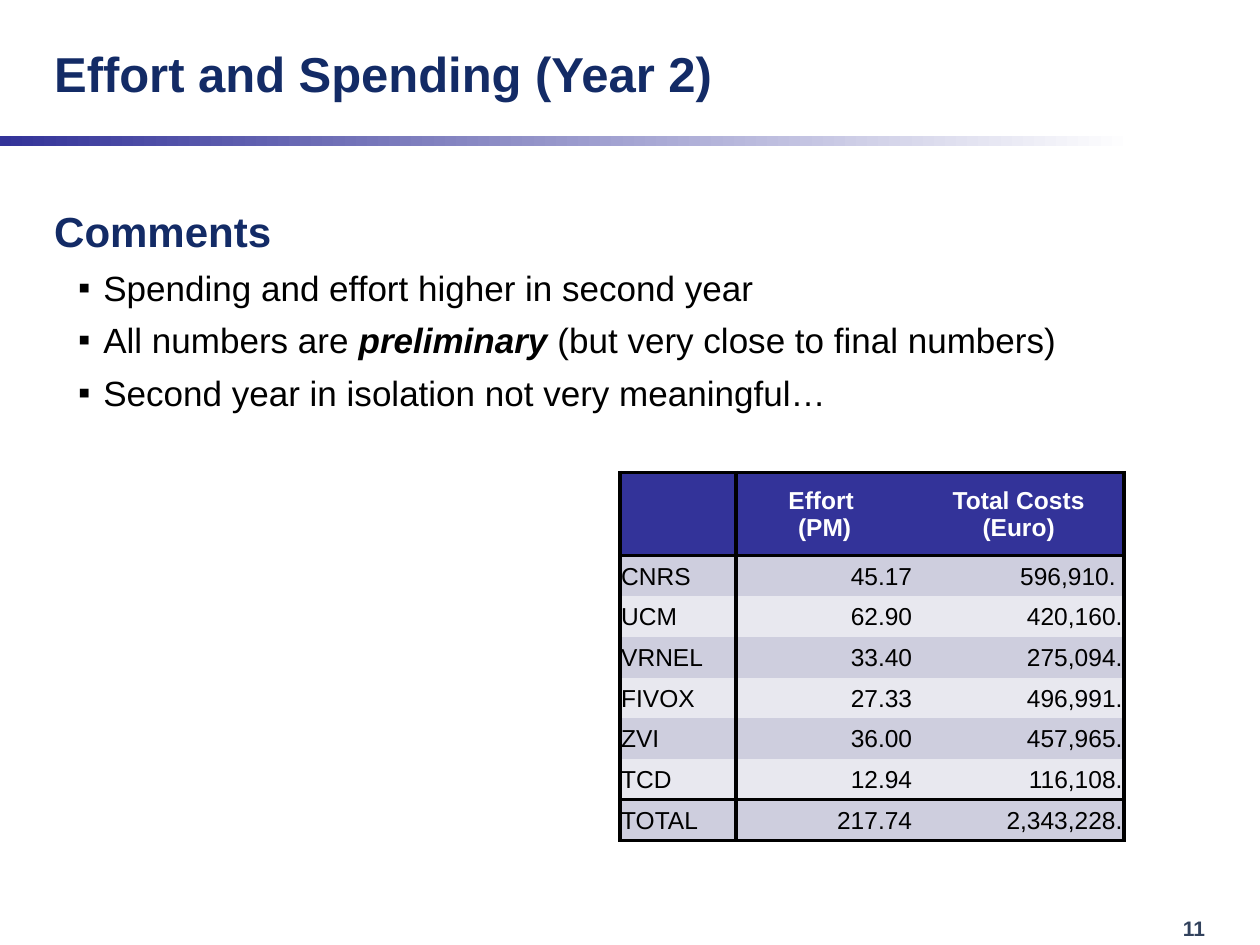
from dataclasses import dataclass

from lxml import etree
from pptx import Presentation
from pptx.dml.color import RGBColor
from pptx.enum.shapes import MSO_SHAPE
from pptx.enum.text import MSO_ANCHOR, MSO_AUTO_SIZE, PP_ALIGN
from pptx.oxml.ns import qn
from pptx.util import Inches, Pt

LEFT, CENTER, RIGHT = PP_ALIGN.LEFT, PP_ALIGN.CENTER, PP_ALIGN.RIGHT
TOP, MIDDLE = MSO_ANCHOR.TOP, MSO_ANCHOR.MIDDLE


@dataclass(frozen=True)
class Theme:
    font: str = "Arial"
    navy: str = "132B66"
    indigo: str = "333399"
    slate: str = "32425D"
    white: str = "FFFFFF"
    black: str = "000000"
    bands: tuple = ("CECEDE", "E8E8EF")
    title: int = 28
    heading: int = 24
    bullet: int = 20
    cell: int = 14
    number: int = 12
    border: float = 2.25


THEME = Theme()
WIDTH, HEIGHT = 10, 7.5
MARGIN = 0.33

COMMENTS = [
    [("Spending and effort higher in second year", False)],
    [("All numbers are ", False), ("preliminary ", True),
     ("(but very close to final numbers)", False)],
    [("Second year in isolation not very meaningful…", False)],
]

COSTS = [
    ("", "Effort \v(PM)", "Total Costs\v(Euro)"),
    ("CNRS", "45.17", "596,910. "),
    ("UCM", "62.90", "420,160."),
    ("VRNEL", "33.40", "275,094."),
    ("FIVOX", "27.33", "496,991."),
    ("ZVI", "36.00", "457,965."),
    ("TCD", "12.94", "116,108."),
    ("TOTAL", "217.74", "2,343,228."),
]
COLUMNS = (0.92, 1.41, 1.67)
HEADER_HEIGHT, TABLE_HEIGHT = 0.66, 2.92
RULED_COLUMNS = {0, 1, len(COLUMNS)}
RULED_ROWS = {0, 1, len(COSTS) - 1, len(COSTS)}


def add_text(p, text, size, color=THEME.black, bold=False, italic=False):
    """Append text to a paragraph; a vertical tab becomes a line break."""
    for i, line in enumerate(text.split("\v")):
        if i:
            p.add_line_break()
        r = p.add_run()
        r.text = line
        r.font.name, r.font.size = THEME.font, Pt(size)
        r.font.bold, r.font.italic = bold, italic
        r.font.color.rgb = RGBColor.from_string(color)


def place(s, left, top, width, height):
    s.left, s.top = Inches(left), Inches(top)
    s.width, s.height = Inches(width), Inches(height)


def set_frame(tf, anchor):
    tf.word_wrap = True
    tf.auto_size = MSO_AUTO_SIZE.NONE
    tf.vertical_anchor = anchor


def set_bullet(p, char, left, hanging):
    """Indent a paragraph; without a character it gets no bullet."""
    pPr = p._p.get_or_add_pPr()
    pPr.set("marL", str(Inches(left)))
    pPr.set("indent", str(-Inches(hanging)))
    if char:
        etree.SubElement(pPr, qn("a:buFont"), typeface=THEME.font)
        etree.SubElement(pPr, qn("a:buChar"), char=char)
    else:
        etree.SubElement(pPr, qn("a:buNone"))


def add_title(slide, text):
    s = slide.shapes.title
    place(s, MARGIN, 0.08, 7.08, 1)
    set_frame(s.text_frame, MIDDLE)
    p = s.text_frame.paragraphs[0]
    p.alignment = LEFT
    add_text(p, text, THEME.title, THEME.navy, bold=True)


def add_gradient_bar(slide):
    s = slide.shapes.add_shape(MSO_SHAPE.RECTANGLE, 0, Inches(1.08),
                               Inches(WIDTH), Inches(0.08))
    s.shadow.inherit = False
    s.line.fill.background()
    s.fill.gradient()
    s.fill.gradient_angle = 0
    stops = ((0, THEME.indigo), (0.9, THEME.white))
    for stop, (position, color) in zip(s.fill.gradient_stops, stops):
        stop.position = position
        stop.color.rgb = RGBColor.from_string(color)


def add_comments(slide, heading, items):
    s = slide.placeholders[1]
    place(s, MARGIN, 1.58, WIDTH - 2 * MARGIN, 5.58)
    tf = s.text_frame
    set_frame(tf, TOP)
    p = tf.paragraphs[0]
    p.space_before = Pt(0)
    set_bullet(p, None, 0.38, 0.38)
    add_text(p, heading, THEME.heading, THEME.navy, bold=True)
    for runs in items:
        p = tf.add_paragraph()
        p.level = 1
        p.space_before = Pt(6)
        set_bullet(p, "▪", 0.39, 0.2)
        for text, strong in runs:
            add_text(p, text, THEME.bullet, bold=strong, italic=strong)


def set_borders(cell, row, col):
    """Draw the cell sides that lie on a ruled line of the table."""
    tcPr = cell._tc.get_or_add_tcPr()
    sides = {"L": col in RULED_COLUMNS, "R": col + 1 in RULED_COLUMNS,
             "T": row in RULED_ROWS, "B": row + 1 in RULED_ROWS}
    for side, ruled in sides.items():
        ln = etree.SubElement(tcPr, qn(f"a:ln{side}"), w=str(Pt(THEME.border)))
        if ruled:
            fill = etree.SubElement(ln, qn("a:solidFill"))
            etree.SubElement(fill, qn("a:srgbClr"), val=THEME.black)
        else:
            etree.SubElement(ln, qn("a:noFill"))


def fill_cell(cell, text, row, col):
    header = row == 0
    set_borders(cell, row, col)
    cell.fill.solid()
    cell.fill.fore_color.rgb = RGBColor.from_string(
        THEME.indigo if header else THEME.bands[(row - 1) % 2])
    cell.margin_left = cell.margin_right = cell.margin_top = Inches(0.01)
    cell.margin_bottom = 0
    cell.vertical_anchor = MIDDLE
    if text:
        p = cell.text_frame.paragraphs[0]
        p.alignment = CENTER if header else RIGHT if col else LEFT
        add_text(p, text, THEME.cell,
                 THEME.white if header else THEME.black, bold=header)


def add_cost_table(slide, rows):
    frame = slide.shapes.add_table(
        len(rows), len(COLUMNS), Inches(4.92), Inches(3.75),
        Inches(sum(COLUMNS)), Inches(TABLE_HEIGHT))
    table = frame.table
    table.first_row = table.horz_banding = False
    for column, width in zip(table.columns, COLUMNS):
        column.width = Inches(width)
    row_height = (TABLE_HEIGHT - HEADER_HEIGHT) / (len(rows) - 1)
    for i, values in enumerate(rows):
        table.rows[i].height = Inches(row_height if i else HEADER_HEIGHT)
        for j, text in enumerate(values):
            fill_cell(table.cell(i, j), text, i, j)


def add_page_number(slide, number):
    s = slide.shapes.add_textbox(Inches(9.29), Inches(7.22),
                                 Inches(0.64), Inches(0.3))
    set_frame(s.text_frame, TOP)
    add_text(s.text_frame.paragraphs[0], number, THEME.number,
             THEME.slate, bold=True)


def main():
    prs = Presentation()
    prs.slide_width, prs.slide_height = Inches(WIDTH), Inches(HEIGHT)
    slide = prs.slides.add_slide(prs.slide_layouts[1])
    add_page_number(slide, "11")
    add_gradient_bar(slide)
    add_title(slide, "Effort and Spending (Year 2)")
    add_comments(slide, "Comments", COMMENTS)
    add_cost_table(slide, COSTS)
    prs.save("out.pptx")


if __name__ == "__main__":
    main()
